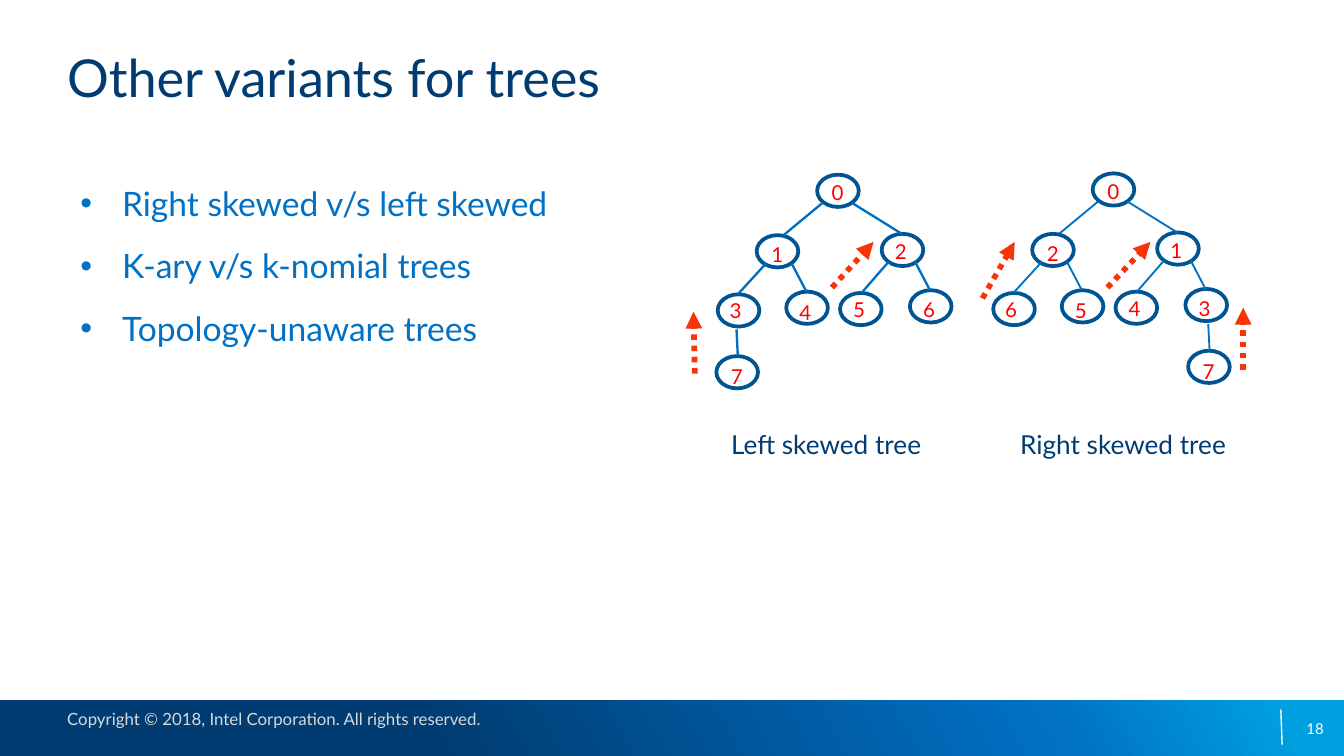
from copy import deepcopy
from collections import namedtuple

from pptx import Presentation
from pptx.dml.color import RGBColor
from pptx.enum.dml import MSO_LINE
from pptx.enum.shapes import MSO_CONNECTOR, MSO_SHAPE
from pptx.enum.text import MSO_ANCHOR, PP_ALIGN
from pptx.oxml.ns import qn
from pptx.oxml.xmlchemy import OxmlElement as Element
from pptx.util import Inches, Pt

COLUMNS, ROWS = 100, 56.25
NAVY, BLUE, RED, ORANGE, WHITE = "003C71", "0071C5", "FF0000", "F83308", "FFFFFF"
NODE_W, NODE_H = 3.1, 2.4

Slot = namedtuple("Slot", "x y label_dx label_dy parent start_dx end_dx")
SLOTS = {
    "root": Slot(60.8, 13, 0.1, -0.1, None, 0, 0),
    "left": Slot(56.3, 17.5, 0.1, 0, "root", 0.4, 2),
    "right": Slot(65.6, 17.4, 0, -0.1, "root", 2.6, 1.5),
    "left-left": Slot(53.4, 21.9, -0.1, -0.2, "left", 0.7, 1.5),
    "left-right": Slot(58.5, 21.7, 0, 0.1, "left", 2.6, 1.5),
    "right-left": Slot(62.5, 21.8, 0, -0.2, "right", 0.5, 1.6),
    "right-right": Slot(67.7, 21.6, 0, 0, "right", 2.5, 1.5),
    "under-left": Slot(53.3, 26.5, 0.1, 0.1, "left-left", 1.4, 1.6),
    "under-right": Slot(67.9, 26.2, 0.1, 0.1, "right-right", 1.7, 1.6),
}
LEFT_TREE = {"root": 0, "left": 1, "right": 2, "left-left": 3, "left-right": 4,
             "right-left": 5, "right-right": 6, "under-left": 7}
RIGHT_TREE = {"root": 0, "left": 2, "right": 1, "left-left": 6, "left-right": 5,
              "right-left": 4, "right-right": 3, "under-right": 7}
ARROWS = [(51.7, 27.8, 51.6, 23.2), (61.9, 21.4, 65, 18), (92.5, 27.5, 92.5, 22.9),
          (73.1, 22.2, 75.5, 18), (82.4, 21.4, 85.6, 18)]


def rgb(value):
    """Turn a hex string into a colour."""
    return RGBColor.from_string(value)


def grid(*cells):
    """Turn numbers of grid cells into lengths."""
    return [Inches(cell / 10) for cell in cells]


def add_text(slide, box, lines, size, color, inset=None, wrap=True):
    """Add a text box with one paragraph per line and return its frame."""
    tf = slide.shapes.add_textbox(*grid(*box)).text_frame
    tf.word_wrap = wrap
    if inset is not None:
        tf.margin_left = tf.margin_right = tf.margin_top = tf.margin_bottom = inset
    tf.text = "\n".join(lines)
    for p in tf.paragraphs:
        for r in p.runs:
            r.font.name, r.font.size = "Lato", Pt(size)
            r.font.color.rgb = rgb(color)
    return tf


def add_bullets(slide, box, lines):
    """Add a bulleted list."""
    tf = add_text(slide, box, lines, 18, BLUE)
    for i, p in enumerate(tf.paragraphs):
        pPr = p._p.get_or_add_pPr()
        pPr.set("marL", str(Inches(0.31)))
        pPr.set("indent", str(-Inches(0.31)))
        for tag, key, value in (("a:buFont", "typeface", "Arial"), ("a:buChar", "char", "•")):
            bullet = Element(tag)
            bullet.set(key, value)
            pPr.append(bullet)
        if i:
            p.space_before = Pt(12)


def add_tab(p, position):
    """Give a paragraph one left tab stop."""
    tabs, tab = Element("a:tabLst"), Element("a:tab")
    tab.set("pos", str(position))
    tab.set("algn", "l")
    tabs.append(tab)
    p._p.get_or_add_pPr().append(tabs)


def add_line(slide, ends, color, width, arrow=False):
    """Add a straight line, or a dotted arrow."""
    line = slide.shapes.add_connector(MSO_CONNECTOR.STRAIGHT, *grid(*ends))
    line.line.color.rgb = rgb(color)
    line.line.width = Pt(width)
    if arrow:
        line.line.dash_style = MSO_LINE.ROUND_DOT
        head = Element("a:tailEnd")
        head.set("type", "triangle")
        line.line._get_or_add_ln().append(head)
    line._element.spPr.append(Element("a:effectLst"))


def add_band(slide):
    """Add the gradient band along the foot."""
    sp = slide.shapes.add_shape(MSO_SHAPE.RECTANGLE, *grid(0, 52.1, COLUMNS, ROWS - 52.1))
    sp.shadow.inherit = False
    sp.line.fill.background()
    sp.fill.gradient()
    sp.fill.gradient_angle = 29
    stops = sp._element.spPr.find(qn("a:gradFill")).find(qn("a:gsLst"))
    stops.append(deepcopy(stops[-1]))
    colors = ((0.32, NAVY), (0.78, BLUE), (0.95, "009FDF"))
    for stop, (position, color) in zip(sp.fill.gradient_stops, colors):
        stop.position = position
        stop.color.rgb = rgb(color)


def add_node(slide, x, y, slot, number):
    """Add a ringed tree node and its number."""
    sp = slide.shapes.add_shape(MSO_SHAPE.OVAL, *grid(x, y, NODE_W, NODE_H))
    sp.shadow.inherit = False
    sp.fill.background()
    sp.line.color.rgb = rgb("005492")
    sp.line.width = Pt(2)
    label = (x + slot.label_dx, y + slot.label_dy, 2.9, 2.9)
    add_text(slide, label, [str(number)], 11, RED, wrap=False)


def add_tree(slide, numbers, dx, dy, color, width):
    """Add a tree of numbered slots, moved by dx columns and dy rows."""
    for name, number in numbers.items():
        slot = SLOTS[name]
        x, y = slot.x + dx, slot.y + dy
        add_node(slide, x, y, slot, number)
        if slot.parent:
            parent = SLOTS[slot.parent]
            drop = 2.6 if name.startswith("under") else 2.1
            start = (parent.x + dx + slot.start_dx, parent.y + dy + drop)
            add_line(slide, (*start, x + slot.end_dx, y), color, width)


def main():
    """Build the slide and save it."""
    prs = Presentation()
    prs.slide_width, prs.slide_height = grid(COLUMNS, ROWS)
    slide = prs.slides.add_slide(prs.slide_layouts[6])

    add_band(slide)
    add_line(slide, (95.3, 52.8, 95.4, 55.4), WHITE, 0.75)
    add_text(slide, (5, 52.7, 32.2, 1.5),
             ["Copyright © 2018, Intel Corporation. All rights reserved."], 9, "D9D9D9", 0)
    tf = add_text(slide, (95.4, 52.7, 3.1, 3), ["18"], 8, WHITE, 0)
    tf.vertical_anchor = MSO_ANCHOR.MIDDLE
    tf.paragraphs[0].alignment = PP_ALIGN.RIGHT

    add_text(slide, (5, 3.4, 90, 9.5), ["Other variants for trees"], 28, NAVY, 0)
    add_bullets(slide, (5, 13.1, 43.9, 37.5),
                ["Right skewed v/s left skewed", "K-ary v/s k-nomial trees", "Topology-unaware trees"])

    add_tree(slide, LEFT_TREE, 0, 0, "006FC1", 1.25)
    add_tree(slide, RIGHT_TREE, 20.5, -0.1, BLUE, 1)
    tf = add_text(slide, (54.4, 31.9, 45.6, 2.4), ["Left skewed tree\tRight skewed tree"], 14, NAVY, 0)
    add_tab(tf.paragraphs[0], Inches(2.15))
    for ends in ARROWS:
        add_line(slide, ends, ORANGE, 3, arrow=True)

    prs.save("out.pptx")


if __name__ == "__main__":
    main()
